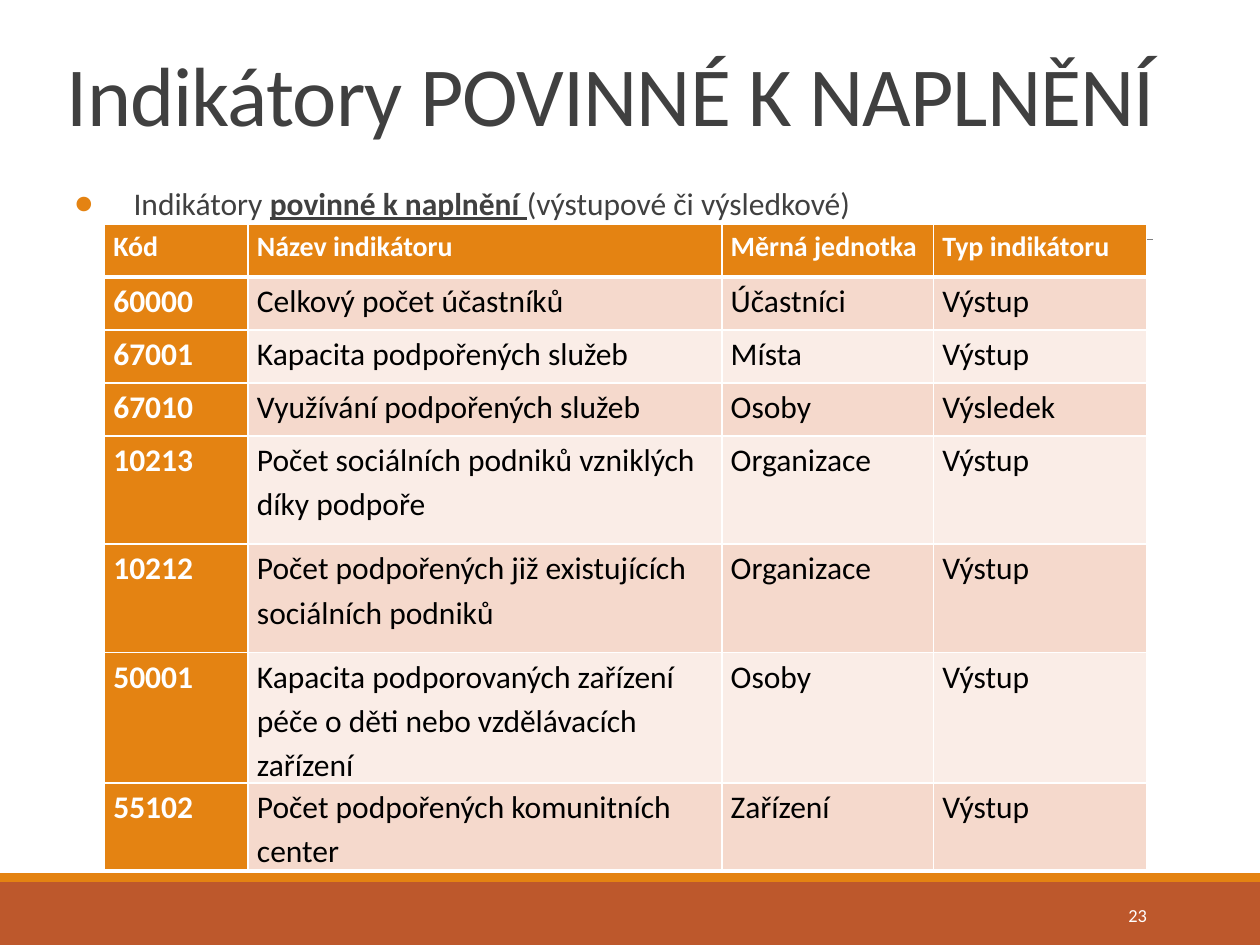
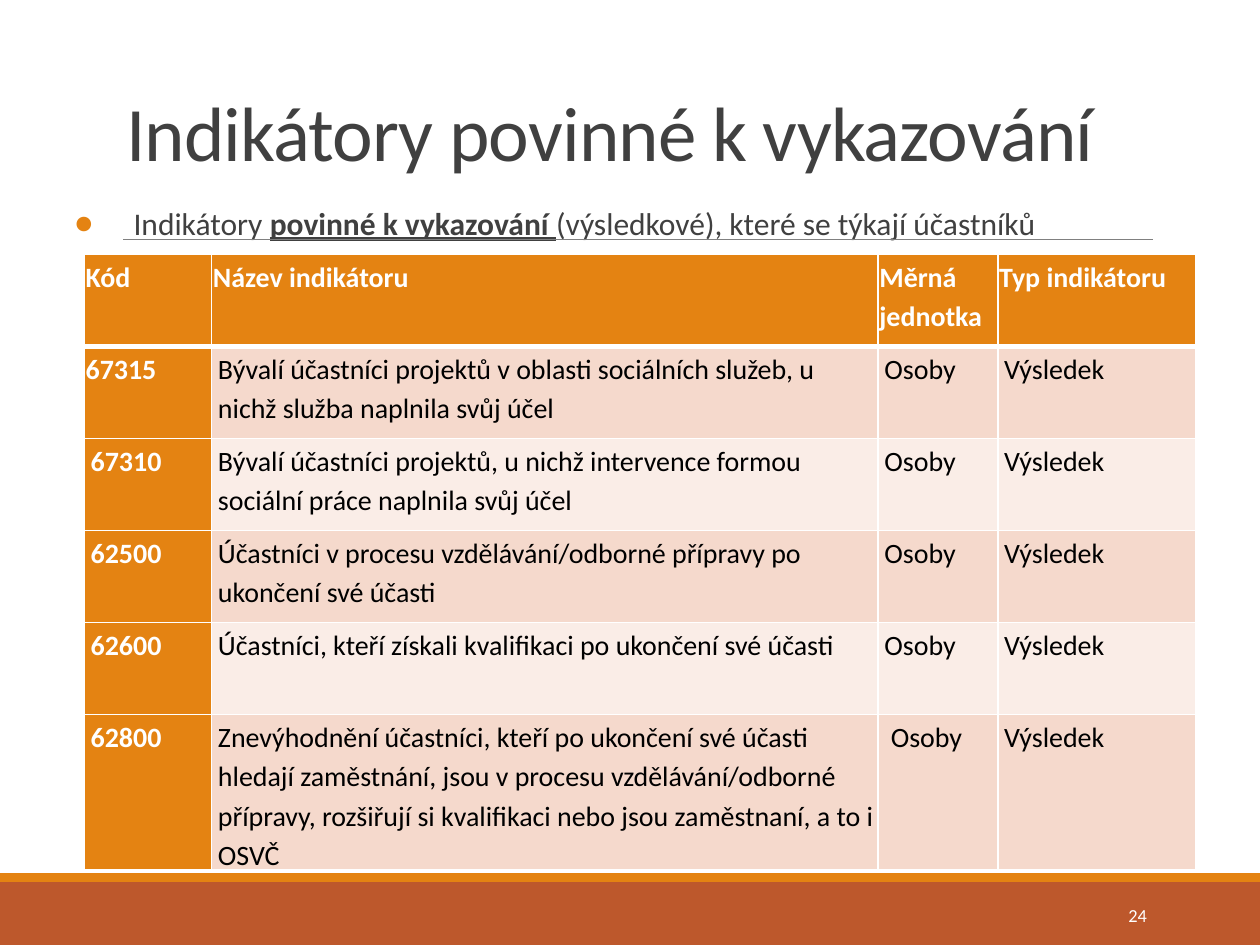
from dataclasses import dataclass
from lxml.etree import SubElement
from pptx import Presentation
from pptx.dml.color import RGBColor
from pptx.enum.shapes import MSO_CONNECTOR, MSO_SHAPE
from pptx.enum.text import MSO_ANCHOR, MSO_AUTO_SIZE, PP_ALIGN
from pptx.oxml import parse_xml
from pptx.oxml.ns import nsdecls, qn
from pptx.util import Inches, Pt

COLOURS = {
    "paper": "FFFFFF",
    "ink": "404040",
    "black": "000000",
    "rule": "808080",
    "orange": "E48312",
    "rust": "BD582C",
    "band_dark": "F5D9CC",
    "band_light": "FAEDE7",
}
FONT = "Calibri"
WIDTH, HEIGHT = Inches(10), Inches(7.5)
GRID_COLUMNS, GRID_ROWS = 100, 75


@dataclass
class TableStyle:
    size: int
    insets: tuple
    header_after: int
    before: int
    after: int
    indent: float = 0


def columns(count):
    return round(WIDTH * count / GRID_COLUMNS)


def rows(count):
    return round(HEIGHT * count / GRID_ROWS)


def colour(name):
    return RGBColor.from_string(COLOURS[name])


class Deck:
    def __init__(self):
        self.presentation = Presentation()
        self.presentation.slide_width = WIDTH
        self.presentation.slide_height = HEIGHT
        self.slide = None

    def start_slide(self, number):
        layout = self.presentation.slide_layouts[1]
        self.slide = self.presentation.slides.add_slide(layout)
        background = self.slide.background.fill
        background.solid()
        background.fore_color.rgb = colour("paper")
        self.band(70, 5, "rust")
        self.band(69.3, 0.7, "orange")
        self.rule(9.8, 91.5, 19)
        self.page_number(number)

    def place(self, element, left, top, width, height):
        element.left, element.top = columns(left), rows(top)
        element.width, element.height = columns(width), rows(height)

    def style(self, paragraph, size, ink, bold=None):
        paragraph.font.name = FONT
        paragraph.font.size = Pt(size)
        paragraph.font.bold = bold
        paragraph.font.color.rgb = colour(ink)

    def space(self, paragraph, line, before=0, after=0):
        paragraph.line_spacing = line
        paragraph.space_before = Pt(before)
        paragraph.space_after = Pt(after)

    def band(self, top, height, fill):
        strip = self.slide.shapes.add_shape(
            MSO_SHAPE.RECTANGLE, 0, rows(top), WIDTH, rows(height))
        strip.shadow.inherit = False
        strip.fill.solid()
        strip.fill.fore_color.rgb = colour(fill)
        strip.line.fill.background()

    def rule(self, start, end, top):
        line = self.slide.shapes.add_connector(
            MSO_CONNECTOR.STRAIGHT, columns(start), rows(top), columns(end), rows(top))
        line.line.color.rgb = colour("rule")
        line.line.width = Pt(0.5)
        SubElement(line._element.spPr, qn("a:effectLst"))

    def page_number(self, number):
        box = self.slide.shapes.add_textbox(
            columns(81.2), rows(70.6), columns(10.8), rows(4))
        box.text_frame.word_wrap = True
        box.text_frame.vertical_anchor = MSO_ANCHOR.MIDDLE
        paragraph = box.text_frame.paragraphs[0]
        paragraph.text = str(number)
        paragraph.alignment = PP_ALIGN.RIGHT
        self.style(paragraph, 10.5, "paper")

    def title(self, text, size, left, top, width, height):
        heading = self.slide.shapes.title
        self.place(heading, left, top, width, height)
        frame = heading.text_frame
        frame.text = text
        frame.auto_size = MSO_AUTO_SIZE.NONE
        frame.vertical_anchor = MSO_ANCHOR.BOTTOM
        paragraph = frame.paragraphs[0]
        paragraph.alignment = PP_ALIGN.LEFT
        self.space(paragraph, 0.85)
        self.style(paragraph, size, "ink")
        paragraph.runs[0]._r.get_or_add_rPr().set("spc", "-50")

    def bullet(self, opening, emphasis, ending, top, height):
        body = self.slide.placeholders[1]
        self.place(body, 5.9, top, 88.2, height)
        frame = body.text_frame
        frame.auto_size = MSO_AUTO_SIZE.NONE
        frame.vertical_anchor = MSO_ANCHOR.TOP
        frame.margin_left = frame.margin_right = 0
        paragraph = frame.paragraphs[0]
        self.space(paragraph, Pt(28.8), 6, 6)
        properties = paragraph._p.get_or_add_pPr()
        properties.set("marL", str(columns(4.7)))
        properties.set("indent", str(-columns(4.7)))
        bullet_colour = SubElement(properties, qn("a:buClr"))
        SubElement(bullet_colour, qn("a:srgbClr"), val=COLOURS["orange"])
        SubElement(properties, qn("a:buFont"), typeface=FONT)
        SubElement(properties, qn("a:buChar"), char="●")
        self.style(paragraph, 18, "ink")
        for text in (opening, emphasis, ending):
            run = paragraph.add_run()
            run.text = text
            run.font.bold = run.font.underline = text == emphasis

    def borders(self, cell, bottom):
        properties = cell._tc.get_or_add_tcPr()
        widths = {"lnL": 1, "lnR": 1, "lnT": 1, "lnB": bottom}
        for position, (side, width) in enumerate(widths.items()):
            properties.insert(position, parse_xml(
                f'<a:{side} {nsdecls("a")} w="{Pt(width)}"><a:solidFill>'
                f'<a:srgbClr val="{COLOURS["paper"]}"/></a:solidFill></a:{side}>'))

    def cell(self, cell, text, row, column, style):
        header, code = row == 0, column == 0
        accent = header or code
        fill = "orange" if accent else "band_dark" if row % 2 else "band_light"
        cell.fill.solid()
        cell.fill.fore_color.rgb = colour(fill)
        self.borders(cell, 3 if header else 1)
        (cell.margin_left, cell.margin_top,
         cell.margin_right, cell.margin_bottom) = map(columns, style.insets)
        cell.text = text
        paragraph = cell.text_frame.paragraphs[0]
        if header or (code and row == 1 and style.indent):
            self.space(paragraph, 1.15, 0, style.header_after)
        else:
            self.space(paragraph, 1.15, style.before, style.after)
            paragraph._p.get_or_add_pPr().set("marL", str(columns(style.indent)))
        size = 16 if header else style.size
        self.style(paragraph, size, "paper" if accent else "black", accent)

    def table(self, left, top, widths, heights, records, style):
        table = self.slide.shapes.add_table(
            len(heights), len(widths), columns(left), rows(top),
            columns(sum(widths)), rows(sum(heights))).table
        for column, width in zip(table.columns, widths):
            column.width = columns(width)
        for row, height in zip(table.rows, heights):
            row.height = rows(height)
        for row, record in enumerate(records):
            for column, text in enumerate(record):
                self.cell(table.cell(row, column), text, row, column, style)


HEADER = ("Kód", "Název indikátoru", "Měrná jednotka", "Typ indikátoru")

REQUIRED_TARGETS = [
    HEADER,
    ("60000", "Celkový počet účastníků", "Účastníci", "Výstup"),
    ("67001", "Kapacita podpořených služeb", "Místa", "Výstup"),
    ("67010", "Využívání podpořených služeb", "Osoby", "Výsledek"),
    ("10213", "Počet sociálních podniků vzniklých díky podpoře", "Organizace", "Výstup"),
    ("10212", "Počet podpořených již existujících sociálních podniků", "Organizace", "Výstup"),
    ("50001", "Kapacita podporovaných zařízení péče o děti nebo vzdělávacích zařízení",
     "Osoby", "Výstup"),
    ("55102", "Počet podpořených komunitních center", "Zařízení", "Výstup"),
]

REQUIRED_REPORTS = [
    HEADER,
    ("67315", "Bývalí účastníci projektů v oblasti sociálních služeb, "
     "u nichž služba naplnila svůj účel", "Osoby", "Výsledek"),
    ("67310", "Bývalí účastníci projektů, u nichž intervence formou "
     "sociální práce naplnila svůj účel", "Osoby", "Výsledek"),
    ("62500", "Účastníci v procesu vzdělávání/odborné přípravy "
     "po ukončení své účasti", "Osoby", "Výsledek"),
    ("62600", "Účastníci, kteří získali kvalifikaci po ukončení své účasti",
     "Osoby", "Výsledek"),
    ("62800", "Znevýhodnění účastníci, kteří po ukončení své účasti hledají zaměstnání, "
     "jsou v procesu vzdělávání/odborné přípravy, rozšiřují si kvalifikaci "
     "nebo jsou zaměstnaní, a to i OSVČ", " Osoby", "Výsledek"),
]


def main():
    deck = Deck()

    deck.start_slide(23)
    deck.title("Indikátory POVINNÉ K NAPLNĚNÍ", 48, 4.3, 3.1, 89, 8.8)
    deck.bullet("Indikátory ", "povinné k naplnění ", "(výstupové či výsledkové)", 13.1, 53.8)
    deck.table(8.3, 17.8, [11.4, 37.6, 16.8, 16.9],
               [4.2] * 4 + [8.6] * 2 + [9.9, 6.5], REQUIRED_TARGETS,
               TableStyle(18, (0.7, 0, 0.7, 0), 6, 0, 6))

    deck.start_slide(24)
    deck.title("Indikátory povinné k vykazování", 44, 9, 3.1, 82.5, 11.5)
    deck.bullet("Indikátory ", "povinné k vykazování ",
                "(výsledkové), které se týkají účastníků", 14.7, 52.3)
    deck.table(6.7, 20.2, [10.1, 52.9, 9.5, 15.7],
               [7.3] * 5 + [10], REQUIRED_REPORTS,
               TableStyle(16, (0.1, 0.1, 0.1, 0), 10, 3, 3, 0.4))

    deck.presentation.save("out.pptx")


if __name__ == "__main__":
    main()
